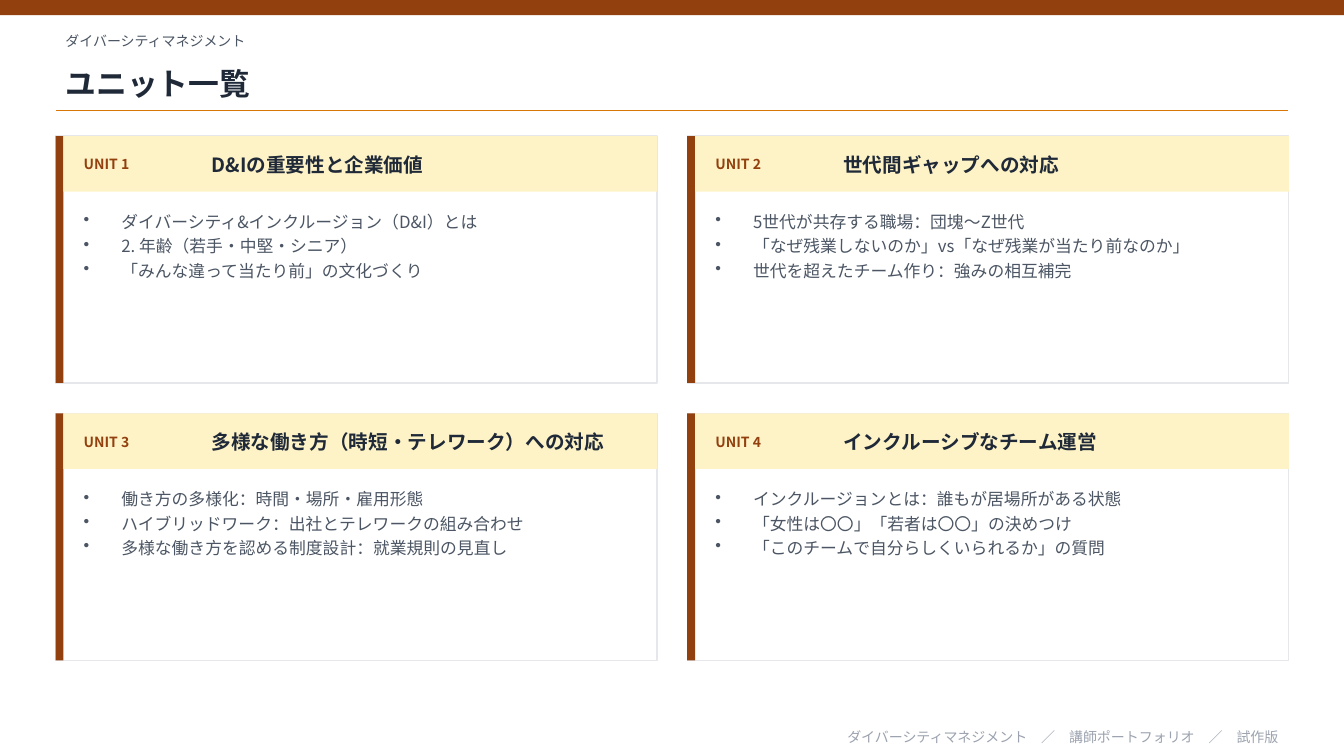
import pptx
import pptx.util
import pptx.dml.color
import pptx.enum.shapes
import pptx.enum.text
import pptx.oxml.ns
import lxml.etree

Cm = pptx.util.Cm
Pt = pptx.util.Pt
FONT = "Noto Sans CJK JP"
COLORS = {
    "brown": "92400E",
    "orange": "D97706",
    "cream": "FEF3C7",
    "ink": "1F2937",
    "body": "4B5563",
    "border": "E5E7EB",
    "footer": "9CA3AF",
    "white": "FFFFFF",
}
UNITS = [
    ("D&Iの重要性と企業価値", [
        "ダイバーシティ&インクルージョン（D&I）とは",
        "2. 年齢（若手・中堅・シニア）",
        "「みんな違って当たり前」の文化づくり",
    ]),
    ("世代間ギャップへの対応", [
        "5世代が共存する職場：団塊～Z世代",
        "「なぜ残業しないのか」vs「なぜ残業が当たり前なのか」",
        "世代を超えたチーム作り：強みの相互補完",
    ]),
    ("多様な働き方（時短・テレワーク）への対応", [
        "働き方の多様化：時間・場所・雇用形態",
        "ハイブリッドワーク：出社とテレワークの組み合わせ",
        "多様な働き方を認める制度設計：就業規則の見直し",
    ]),
    ("インクルーシブなチーム運営", [
        "インクルージョンとは：誰もが居場所がある状態",
        "「女性は〇〇」「若者は〇〇」の決めつけ",
        "「このチームで自分らしくいられるか」の質問",
    ]),
]

presentation = pptx.Presentation()
presentation.slide_width = Cm(33.87)
presentation.slide_height = Cm(19.05)
slide = presentation.slides.add_slide(presentation.slide_layouts[5])


def add_rectangle(left, top, width, height, fill, line=None):
    shape = slide.shapes.add_shape(
        pptx.enum.shapes.MSO_SHAPE.RECTANGLE, Cm(left), Cm(top), Cm(width), Cm(height))
    shape.shadow.inherit = False
    shape.fill.solid()
    shape.fill.fore_color.rgb = pptx.dml.color.RGBColor.from_string(COLORS[fill])
    if line:
        shape.line.color.rgb = pptx.dml.color.RGBColor.from_string(COLORS[line])
        shape.line.width = Pt(1)
    else:
        shape.line.fill.background()


def write_text(shape, box, lines, size, color, bold=False, align="LEFT", bullets=False):
    shape.left, shape.top, shape.width, shape.height = [Cm(length) for length in box]
    frame = shape.text_frame
    frame.word_wrap = True
    frame.auto_size = pptx.enum.text.MSO_AUTO_SIZE.NONE
    anchor = pptx.enum.text.MSO_ANCHOR
    frame.vertical_anchor = anchor.TOP if bullets else anchor.MIDDLE
    frame.text = "\n".join(lines)
    for paragraph in frame.paragraphs:
        paragraph.alignment = pptx.enum.text.PP_ALIGN[align]
        if bullets:
            paragraph.space_after = Pt(3)
            properties = paragraph._p.get_or_add_pPr()
            properties.set("marL", str(Cm(0.95)))
            properties.set("indent", str(-Cm(0.95)))
            bullet = lxml.etree.SubElement(properties, pptx.oxml.ns.qn("a:buChar"))
            bullet.set("char", "•")
        paragraph.font.name = FONT
        paragraph.font.size = Pt(size)
        paragraph.font.bold = bold
        paragraph.font.color.rgb = pptx.dml.color.RGBColor.from_string(COLORS[color])


add_rectangle(0, 0, 33.87, 0.38, "brown")
course = slide.shapes.add_textbox(0, 0, 0, 0)
write_text(course, (1.4, 0.64, 31.06, 0.76), ["ダイバーシティマネジメント"], 10, "body")
write_text(slide.shapes.title, (1.4, 1.4, 31.06, 1.4), ["ユニット一覧"], 22, "ink", bold=True)

rule = slide.shapes.add_connector(
    pptx.enum.shapes.MSO_CONNECTOR.STRAIGHT, Cm(1.4), Cm(2.79), Cm(32.46), Cm(2.79))
rule.line.color.rgb = pptx.dml.color.RGBColor.from_string(COLORS["orange"])
rule.line.width = Pt(1)
lxml.etree.SubElement(rule._element.spPr, pptx.oxml.ns.qn("a:effectLst"))

for index, (heading, topics) in enumerate(UNITS):
    row, column = divmod(index, 2)
    left = 1.4 + column * 15.92
    top = 3.43 + row * 6.99
    add_rectangle(left, top, 15.16, 6.22, "white", "border")
    add_rectangle(left, top, 0.2, 6.22, "brown")
    add_rectangle(left + 0.2, top, 14.96, 1.4, "cream")
    label, title, body = [slide.shapes.add_textbox(0, 0, 0, 0) for _ in range(3)]
    write_text(label, (left + 0.46, top + 0.2, 3.05, 1.02), [f"UNIT {index + 1}"], 10, "brown", bold=True)
    write_text(title, (left + 3.68, top + 0.2, 11.1, 1.02), [heading], 14, "ink", bold=True)
    write_text(body, (left + 0.46, top + 1.78, 14.25, 4.06), topics, 12, "body", bullets=True)

footer = slide.shapes.add_textbox(0, 0, 0, 0)
write_text(footer, (1.4, 18.29, 31.06, 0.56),
           ["ダイバーシティマネジメント　／　講師ポートフォリオ　／　試作版"], 10, "footer", align="RIGHT")

presentation.save("out.pptx")
